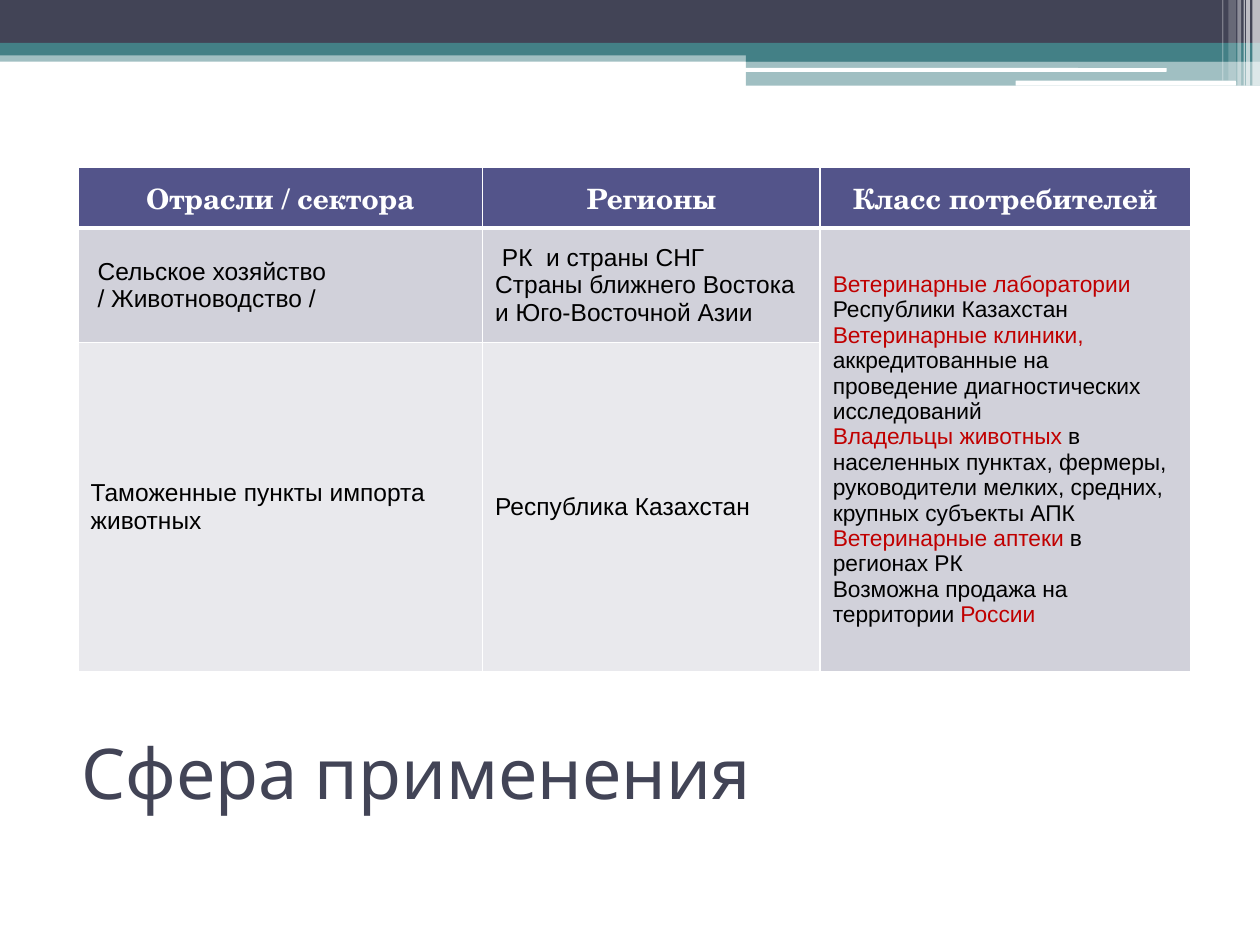
"""Build the slide on fields of application: banner, table and title."""
from lxml import etree
from pptx import Presentation, util as u
from pptx.dml.color import RGBColor
from pptx.enum import shapes, text
from pptx.oxml import ns

SLATE = RGBColor(0x42, 0x44, 0x56)
TEAL = RGBColor(0x43, 0x80, 0x86)
WHITE = RGBColor(0xFF, 0xFF, 0xFF)
BLACK = RGBColor(0x00, 0x00, 0x00)
RED = RGBColor(0xC0, 0x00, 0x00)
INDIGO = RGBColor(0x53, 0x54, 0x8A)
BAND_DARK = RGBColor(0xD1, 0xD1, 0xDA)
BAND_LIGHT = RGBColor(0xE9, 0xE9, 0xED)

deck = Presentation()
deck.slide_width, deck.slide_height = u.Inches(10), u.Inches(7.5)
page = deck.slides.add_slide(deck.slide_layouts[6])
percent = deck.slide_width / 100


def add_span(para, words, font="Arial", size=14, color=BLACK, bold=False):
    span = para.add_run()
    span.text = words
    span.font.name, span.font.size = font, u.Pt(size)
    span.font.color.rgb, span.font.bold = color, bold


def add_bar(left, top, width, height, color, opacity=100, rounded=False):
    kind = shapes.MSO_SHAPE.ROUNDED_RECTANGLE if rounded else shapes.MSO_SHAPE.RECTANGLE
    bar = page.shapes.add_shape(kind, *(round(share * percent) for share in (left, top, width, height)))
    bar.shadow.inherit = False
    bar.line.fill.background()
    bar.fill.solid()
    bar.fill.fore_color.rgb = color
    if opacity < 100:
        tint = bar.fill._xPr.find(".//" + ns.qn("a:srgbClr"))
        etree.SubElement(tint, ns.qn("a:alpha"), val=str(opacity * 1000))


add_bar(0, 4, 100, 0.9, TEAL, opacity=50)
add_bar(0, 0, 100, 3.4, SLATE)
add_bar(0, 3.4, 100, 1, TEAL)
add_bar(59.2, 3.9, 40.8, 1, TEAL)
add_bar(59.2, 4.8, 40.8, 2, TEAL, opacity=50)
add_bar(59.1, 5.4, 33.5, 0.3, WHITE, rounded=True)
add_bar(80.6, 6.4, 17.5, 0.4, WHITE, rounded=True)

stripes = [(99.4, 0.6, 6.8, 65), (98.9, 0.3, 6.8, 65), (98.7, 0.1, 6.8, 60),
           (98.2, 0.3, 6.8, 40), (97.5, 0.6, 6.4, 20), (97, 0.1, 6.4, 30)]
for left, width, height, opacity in stripes:
    add_bar(left, 0, width, height, WHITE, opacity=opacity)

title = page.shapes.add_textbox(*(round(share * percent) for share in (5.5, 55.5, 89.5, 11.5)))
title.text_frame.word_wrap = True
title.text_frame.vertical_anchor = text.MSO_ANCHOR.MIDDLE
add_span(title.text_frame.paragraphs[0], "Сфера применения", font="Karla", size=40, color=SLATE)

consumers = [
    [("Ветеринарные лаборатории ", RED), ("Республики Казахстан", BLACK)],
    [("Ветеринарные клиники,", RED),
     (" аккредитованные на проведение диагностических исследований", BLACK)],
    [("Владельцы животных ", RED),
     ("в населенных пунктах, фермеры, руководители мелких, средних, крупных субъекты АПК ", BLACK),
     ("Ветеринарные аптеки", RED), (" в регионах РК", BLACK)],
    [("Возможна продажа на территории ", BLACK), ("России", RED)],
]
rows = [
    [[[(heading, WHITE)]] for heading in ("Отрасли / сектора", "Регионы", "Класс потребителей")],
    [[[(" Сельское хозяйство", BLACK)], [(" / Животноводство /", BLACK)]],
     [[(" РК  и страны СНГ", BLACK)], [("Страны ближнего Востока и Юго-Восточной Азии", BLACK)]],
     consumers],
    [[[("Таможенные пункты импорта животных", BLACK)]], [[("Республика Казахстан", BLACK)]], []],
]
column_shares, row_shares = (32.1, 26.8, 29.4), (4.8, 9.1, 26.1)
row_fills = (INDIGO, BAND_DARK, BAND_LIGHT)

table = page.shapes.add_table(3, 3, *(round(share * percent) for share in (6.2, 13.3, 88.3, 40))).table
for column, share in zip(table.columns, column_shares):
    column.width = round(share * percent)
for row, share in zip(table.rows, row_shares):
    row.height = round(share * percent)
table.cell(1, 2).merge(table.cell(2, 2))

for row_index, row in enumerate(rows):
    for column_index, paragraphs in enumerate(row):
        cell = table.cell(row_index, column_index)
        is_header, is_consumers = row_index == 0, paragraphs is consumers
        cell.vertical_anchor = text.MSO_ANCHOR.MIDDLE
        properties = cell._tc.get_or_add_tcPr()
        for side in "LRTB":
            heavy = (side, row_index) in (("B", 0), ("T", 1))
            edge = etree.SubElement(properties, ns.qn("a:ln" + side), w=str(u.Pt(3 if heavy else 1)))
            paint = etree.SubElement(edge, ns.qn("a:solidFill"))
            etree.SubElement(paint, ns.qn("a:srgbClr"), val=str(WHITE))
        cell.fill.solid()
        cell.fill.fore_color.rgb = row_fills[row_index]
        for index, spans in enumerate(paragraphs):
            para = cell.text_frame.paragraphs[0] if index == 0 else cell.text_frame.add_paragraph()
            para.alignment = text.PP_ALIGN.CENTER if is_header else text.PP_ALIGN.LEFT
            for words, color in spans:
                add_span(para, words, font="TeX Gyre Schola" if is_header else "Arial",
                         size=16 if is_header else 13 if is_consumers else 14,
                         color=color, bold=is_header)

deck.save("out.pptx")
